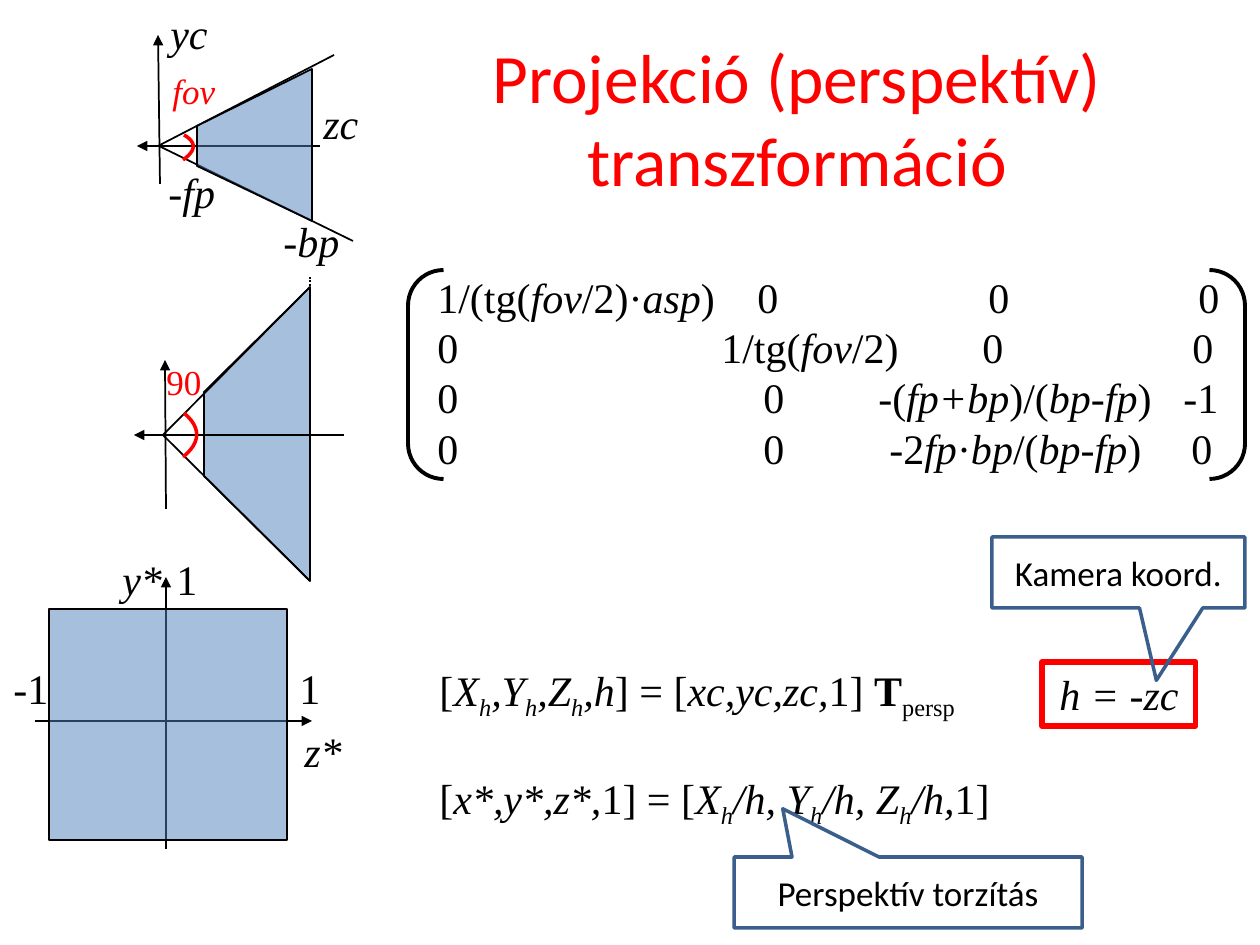
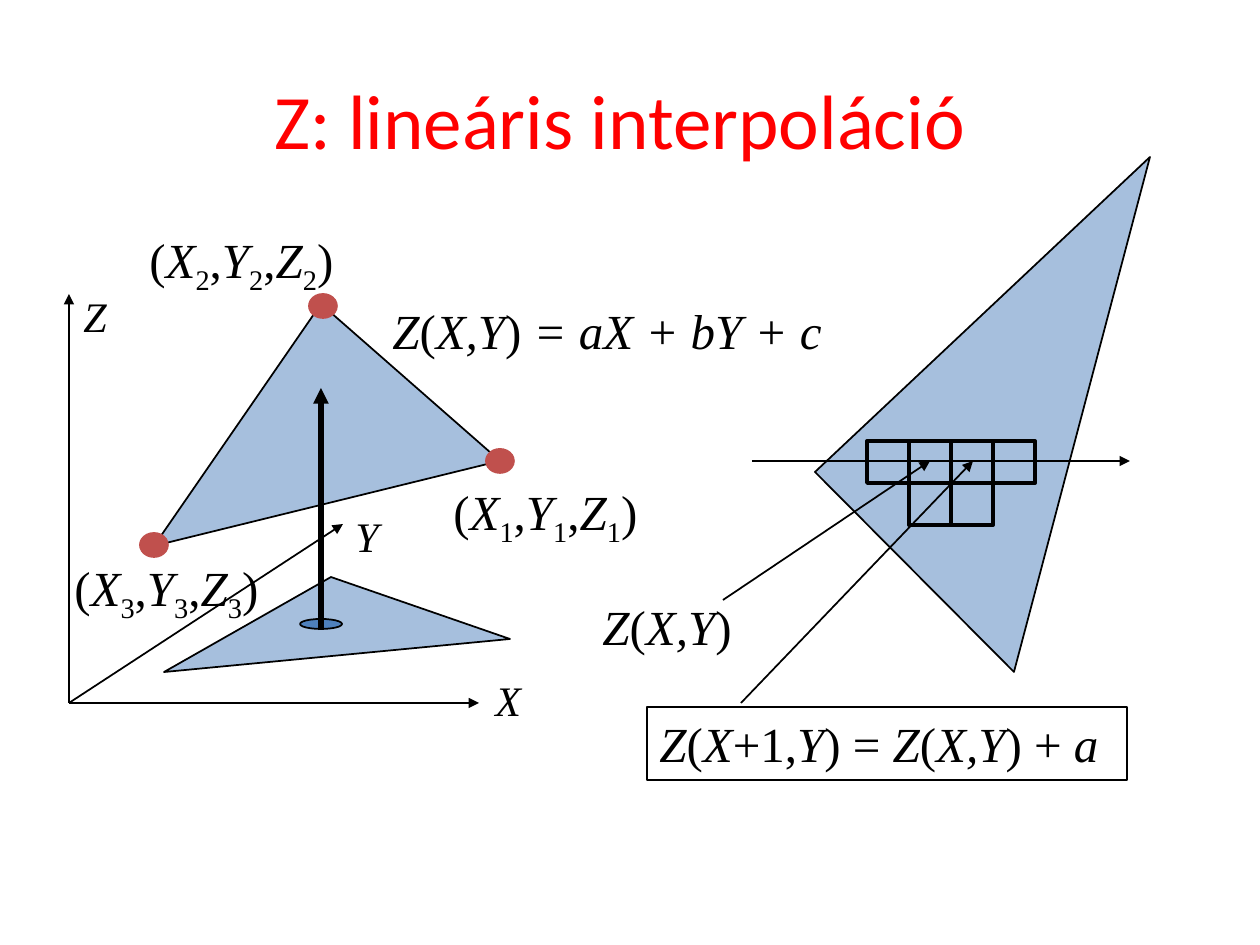
"""Builds two slides on the perspective projection and linear Z interpolation."""
from lxml.etree import SubElement
from pptx import Presentation
from pptx.dml.color import RGBColor
from pptx.enum.dml import MSO_LINE
from pptx.enum.shapes import MSO_CONNECTOR, MSO_SHAPE as Preset
from pptx.enum.text import MSO_ANCHOR as Anchor, MSO_AUTO_SIZE as AutoSize, PP_ALIGN as Align
from pptx.oxml.ns import qn
from pptx.util import Emu, Pt

EMU_PER_PX = 914400 / 126
BLACK = RGBColor(0x00, 0x00, 0x00)
RED = RGBColor(0xFF, 0x00, 0x00)
BLUE = RGBColor(0x4F, 0x81, 0xBD)
NAVY = RGBColor(0x3A, 0x5F, 0x8C)
BRICK = RGBColor(0xC0, 0x50, 0x4D)
HEADING, MATH = "Calibri", "Times New Roman"

# In formulas ~ switches italic, _ subscript and ^ bold.
PROJECTION = {
    "title": ("Projekció (perspektív)\vtranszformáció", (397, 38, 800, 158), 39.6),
    "axes": [
        ((320, 146), (137, 146)), ((160, 184), (158, 35)),
        ((166, 849), (166, 577)), ((35, 721), (312, 721)),
    ],
    "rays": [((158, 146), (334, 55)), ((159, 146), (353, 241))],
    "regions": [
        [(197, 166), (312, 221), (312, 69), (197, 126)],
        [(204, 476), (310, 581), (310, 287), (204, 392)],
    ],
    "labels": [
        ("~zc~", (311, 91, 60, 63), 24, BLACK),
        ("~yc~", (158, 1, 63, 63), 24, BLACK),
        ("-~fp~", (156, 160, 72, 63), 24, BLACK),
        ("-~bp~", (271, 209, 82, 63), 24, BLACK),
        ("~z*~", (292, 719, 63, 63), 24, BLACK),
        ("~y*~", (110, 547, 66, 63), 24, BLACK),
        ("1", (164, 547, 47, 63), 24, BLACK),
        ("1", (287, 656, 47, 63), 24, BLACK),
        ("-1", (1, 656, 60, 63), 24, BLACK),
        ("~fov~", (160, 63, 68, 55), 20, RED),
        ("90", (154, 354, 60, 55), 20, RED),
    ],
}
RIGHT_ANGLE_AXES = [((344, 435), (134, 435)), ((166, 509), (165, 360))]
RIGHT_ANGLE_RAYS = [((163, 435), (310, 287)), ((163, 435), (310, 581))]
BACK_PLANE = ((310, 277), (310, 581))
UNIT_CUBE = (49, 609, 238, 231)
ANGLE_ARCS = [
    ((183, 160), (203, 146), (184, 135)),
    ((183, 457), (210, 435), (184, 413)),
]
MATRIX_BOX = (425, 265, 820, 214)
MATRIX = [
    (["1/(tg(~fov~/2)·~asp~)", "0", "0", "0"], (320, 551, 761)),
    (["0", "1/tg(~fov~/2)", "0", "0"], (284, 545, 755)),
    (["0", "0", "-(~fp+bp~)/(~bp-fp~)", "-1"], (326, 441, 746)),
    (["0", "0", "-2~fp~·~bp~/(~bp-fp~)", "0"], (326, 452, 754)),
]
EQUATIONS = [
    "[~X_h_,Y_h_,Z_h_,h~] = [~xc,yc,zc,~1] ^T^_persp_",
    "[~x*,y*,z*,~1] = [~X_h_/h, Y_h_/h, Z_h_/h,~1]",
]
CALLOUTS = [
    ("Kamera koord.", (992, 537, 253, 71), (0.15, 1.52)),
    ("Perspektív torzítás", (734, 857, 348, 71), (-0.36, -1.18)),
]

ORIGIN = (69, 703)
INTERPOLATION = {
    "title": ("Z: lineáris interpoláció", (-20, 40, 1280, 158), 44),
    "axes": [(ORIGIN, (479, 703)), (ORIGIN, (343, 524)), (ORIGIN, (69, 294))],
    "rays": [],
    "regions": [
        [(154, 546), (500, 461), (321, 304)],
        [(164, 672), (510, 639), (331, 577)],
        [(1014, 672), (815, 472), (1150, 157)],
    ],
    "labels": [
        ("~X~", (483, 668, 50, 63), 24, BLACK),
        ("~Y~", (343, 504, 49, 63), 24, BLACK),
        ("~Z~", (71, 284, 49, 63), 24, BLACK),
        ("~Z~(~X,Y~)~ = aX + bY + c~", (380, 294, 456, 72), 28, BLACK),
        ("~Z~(~X,Y~)", (590, 590, 155, 72), 28, BLACK),
    ],
}
VERTICES = {1: ((500, 461), (441, 475)), 2: ((323, 306), (137, 223)), 3: ((154, 545), (62, 551))}
DOT_WIDTH, DOT_HEIGHT = 28, 24
FOOTPRINT = (300, 619, 42, 10)
HEIGHT_ARROW = ((321, 630), (321, 388))
PIXEL_SIZE, PIXEL_LEFT, PIXEL_TOP = 42, 867, 441
PIXELS = [(0, 0), (1, 0), (2, 0), (3, 0), (1, 1), (2, 1)]
SCAN_ARROWS = [
    ((723, 600), (930, 461)), ((752, 461), (1130, 461)), ((741, 703), (973, 461)),
]
STEP = ("~Z~(~X~+1,~Y~) = ~Z~(~X,Y~) + ~a~", (647, 707, 480, 73))


def px(*lengths):
    return [Emu(round(length * EMU_PER_PX)) for length in lengths]


def style_shape(shape, fill=None, line=BLACK, width=1, alpha=None):
    shape.shadow.inherit = False
    if fill is None:
        shape.fill.background()
    else:
        shape.fill.solid()
        shape.fill.fore_color.rgb = fill
    if alpha:
        color = shape._element.spPr.find(qn("a:solidFill"))[0]
        SubElement(color, qn("a:alpha")).set("val", str(alpha * 1000))
    shape.line.color.rgb = line
    shape.line.width = Pt(width)
    return shape


def add_preset(page, preset, place, **style):
    return style_shape(page.shapes.add_shape(preset, *px(*place)), **style)


def add_outline(page, points, close=True, **style):
    start, *others = [px(*point) for point in points]
    builder = page.shapes.build_freeform(*start)
    builder.add_line_segments(others, close=close)
    return style_shape(builder.convert_to_shape(), **style)


def add_line(page, ends, width=1, arrow=True):
    start, end = ends
    line = page.shapes.add_connector(MSO_CONNECTOR.STRAIGHT, *px(*start, *end))
    line.line.color.rgb = BLACK
    line.line.width = Pt(width)
    if arrow:
        SubElement(line.line._get_or_add_ln(), qn("a:tailEnd")).set("type", "triangle")
    SubElement(line._element.spPr, qn("a:effectLst"))
    return line


def write_formula(para, formula, size, color=BLACK):
    para.font.name, para.font.size, para.font.color.rgb = MATH, Pt(size), color
    active = {"~": False, "_": False, "^": False}
    piece = ""
    for letter in formula + "\0":
        if letter not in active and letter != "\0":
            piece += letter
            continue
        if piece:
            span = para.add_run()
            span.text = piece
            span.font.italic = active["~"] and not (active["_"] and piece.isdigit())
            span.font.bold = active["^"]
            if active["_"]:
                span._r.get_or_add_rPr().set("baseline", "-25000")
        piece = ""
        if letter in active:
            active[letter] = not active[letter]


def add_label(page, formula, place, size, color=BLACK):
    frame = page.shapes.add_textbox(*px(*place)).text_frame
    frame.word_wrap = False
    frame.auto_size = AutoSize.SHAPE_TO_FIT_TEXT
    write_formula(frame.paragraphs[0], formula, size, color)


def write_caption(shape, text, size, color):
    frame = shape.text_frame
    frame.word_wrap = True
    frame.vertical_anchor = Anchor.MIDDLE
    para = frame.paragraphs[0]
    para.text = text
    para.alignment = Align.CENTER
    para.font.name, para.font.size, para.font.color.rgb = HEADING, Pt(size), color


def start_slide(deck, content):
    page = deck.slides.add_slide(deck.slide_layouts[6])
    title, place, size = content["title"]
    write_caption(page.shapes.add_textbox(*px(*place)), title, size, RED)
    for axis in content["axes"]:
        add_line(page, axis)
    for ray in content["rays"]:
        add_line(page, ray, arrow=False)
    for region in content["regions"]:
        add_outline(page, region, fill=BLUE, alpha=50)
    for label in content["labels"]:
        add_label(page, *label)
    return page


def curve_points(start, control, end, steps=12):
    for step in range(steps + 1):
        t = step / steps
        yield [(1 - t) ** 2 * a + 2 * t * (1 - t) * b + t * t * c
               for a, b, c in zip(start, control, end)]


def add_matrix(page):
    brackets = add_preset(page, Preset.DOUBLE_BRACKET, (408, 270, 837, 209), width=2.25)
    brackets.adjustments[0] = 0.17
    frame = page.shapes.add_textbox(*px(*MATRIX_BOX)).text_frame
    frame.word_wrap = True
    for index, (entries, stops) in enumerate(MATRIX):
        para = frame.add_paragraph() if index else frame.paragraphs[0]
        write_formula(para, "\t".join(entries), 24)
        properties = para._p.get_or_add_pPr()
        tabs = SubElement(properties, qn("a:tabLst"))
        properties.insert(0, tabs)
        for stop in px(*stops):
            SubElement(tabs, qn("a:tab"), pos=str(stop), algn="l")


def build_projection(deck):
    page = start_slide(deck, PROJECTION)
    for axis in RIGHT_ANGLE_AXES:
        add_line(page, axis)
    for ray in RIGHT_ANGLE_RAYS:
        add_line(page, ray, arrow=False)
    add_line(page, BACK_PLANE, arrow=False).line.dash_style = MSO_LINE.ROUND_DOT
    add_preset(page, Preset.RECTANGLE, UNIT_CUBE, fill=BLUE, alpha=50)
    for arc in ANGLE_ARCS:
        add_outline(page, list(curve_points(*arc)), close=False, line=RED, width=2)
    add_matrix(page)

    frame = page.shapes.add_textbox(*px(427, 658, 740, 199)).text_frame
    frame.word_wrap = True
    write_formula(frame.paragraphs[0], EQUATIONS[0], 24)
    para = frame.add_paragraph()
    para.space_before = Pt(29)
    write_formula(para, EQUATIONS[1], 24)

    depth = add_preset(page, Preset.RECTANGLE, (1042, 662, 154, 64), line=RED, width=3)
    depth.text_frame.vertical_anchor = Anchor.MIDDLE
    para = depth.text_frame.paragraphs[0]
    para.alignment = Align.CENTER
    write_formula(para, "~h = ~-~zc~", 24)
    for text, place, tip in CALLOUTS:
        callout = add_preset(page, Preset.RECTANGULAR_CALLOUT, place, line=NAVY, width=2)
        callout.adjustments[0], callout.adjustments[1] = tip
        write_caption(callout, text, 20, BLACK)


def build_interpolation(deck):
    page = start_slide(deck, INTERPOLATION)
    add_preset(page, Preset.OVAL, FOOTPRINT, fill=BLUE)
    add_line(page, HEIGHT_ARROW, width=3)
    for column, row in PIXELS:
        place = (PIXEL_LEFT + column * PIXEL_SIZE, PIXEL_TOP + row * PIXEL_SIZE,
                 PIXEL_SIZE, PIXEL_SIZE)
        add_preset(page, Preset.RECTANGLE, place, width=2.25)
    for arrow in SCAN_ARROWS:
        add_line(page, arrow)
    for number, ((x, y), corner) in VERTICES.items():
        dot = (x - DOT_WIDTH // 2, y - DOT_HEIGHT // 2, DOT_WIDTH, DOT_HEIGHT)
        add_preset(page, Preset.OVAL, dot, fill=BRICK, line=BRICK)
        name = ",".join(f"~{axis}~_{number}_" for axis in "XYZ")
        add_label(page, f"({name})", (*corner, 217, 72), 28)
    formula, place = STEP
    add_preset(page, Preset.RECTANGLE, place)
    add_label(page, formula, place, 28)


def main():
    deck = Presentation()
    deck.slide_width, deck.slide_height = px(1260, 945)
    build_projection(deck)
    build_interpolation(deck)
    deck.save("out.pptx")


if __name__ == "__main__":
    main()
